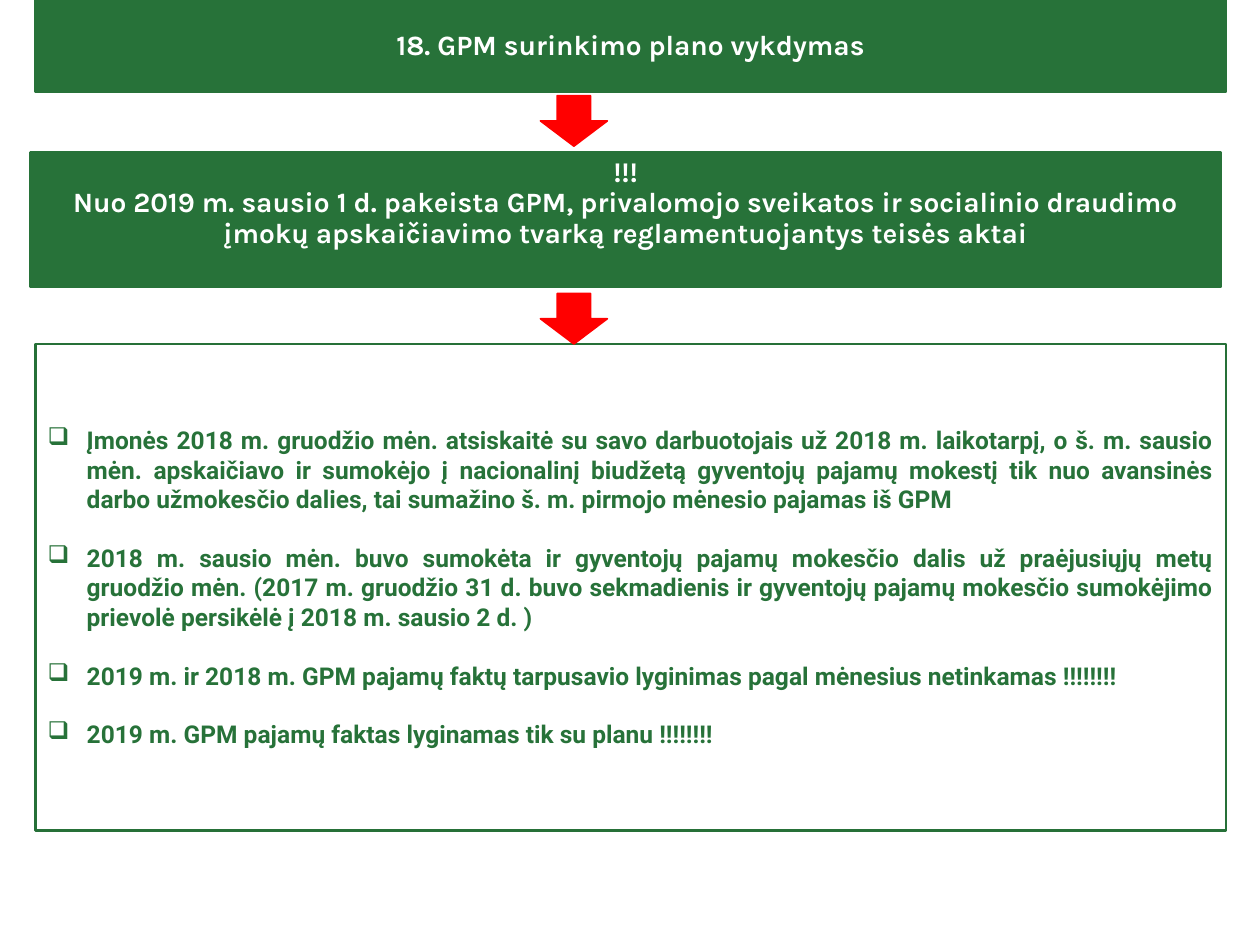
from lxml import etree
from pptx import Presentation
from pptx.dml.color import RGBColor
from pptx.enum.shapes import MSO_SHAPE as Preset
from pptx.enum.text import MSO_ANCHOR as Anchor, MSO_AUTO_SIZE as AutoSize, PP_ALIGN as Align
from pptx.oxml.ns import qn
from pptx.util import Inches, Pt

GREEN, RED, WHITE = "277239", "FF0000", "FFFFFF"
LEFT, WIDTH = 0.28, 9.45
HEADING = {"name": "Karla", "size": Pt(16), "bold": True}
BODY = {"name": "Roboto", "size": Pt(14), "bold": True}


def paint(shape, fill, line, line_width):
    shape.fill.solid()
    shape.fill.fore_color.rgb = RGBColor.from_string(fill)
    shape.line.color.rgb = RGBColor.from_string(line)
    shape.line.width = Pt(line_width)
    shape.shadow.inherit = False


def write(shape, lines, font, color, anchor, **layout):
    """Fill the shape with one paragraph per line and return the paragraphs."""
    frame = shape.text_frame
    frame.word_wrap = True
    frame.auto_size = AutoSize.NONE
    frame.vertical_anchor = anchor
    frame.text = "\n".join(lines)
    for para in frame.paragraphs:
        for name, value in layout.items():
            setattr(para, name, value)
        for span in para.runs:
            for name, value in font.items():
                setattr(span.font, name, value)
            span.font.color.rgb = RGBColor.from_string(color)
    return frame.paragraphs


deck = Presentation()
deck.slide_width, deck.slide_height = Inches(10), Inches(7.5)
page = deck.slides.add_slide(deck.slide_layouts[5])

# Title bar
title = page.shapes.title
title.left, title.top = Inches(LEFT), Inches(0)
title.width, title.height = Inches(WIDTH), Inches(0.73)
paint(title, GREEN, GREEN, 1.5)
write(title, ["18. GPM surinkimo plano vykdymas"], HEADING, WHITE, Anchor.MIDDLE,
      alignment=Align.CENTER, line_spacing=0.9)

# Notice of the changed law
notice = page.shapes.add_shape(
    Preset.RECTANGLE, Inches(0.24), Inches(1.21), Inches(WIDTH), Inches(1.07))
paint(notice, GREEN, GREEN, 1.5)
write(notice, [
    "!!!",
    "Nuo 2019 m. sausio 1 d. pakeista GPM, privalomojo sveikatos ir socialinio draudimo "
    "įmokų apskaičiavimo tvarką reglamentuojantys teisės aktai",
], HEADING, WHITE, Anchor.TOP, alignment=Align.CENTER, line_spacing=0.9)

# Bulleted explanation
details = page.shapes.add_shape(
    Preset.RECTANGLE, Inches(LEFT), Inches(2.73), Inches(WIDTH), Inches(3.86))
paint(details, WHITE, "267038", 1.5)
points = write(details, [
    "Įmonės 2018 m. gruodžio mėn. atsiskaitė su savo darbuotojais už 2018 m. laikotarpį, "
    "o š. m. sausio mėn. apskaičiavo ir sumokėjo į nacionalinį biudžetą gyventojų pajamų "
    "mokestį tik nuo avansinės darbo užmokesčio dalies, tai sumažino š. m. pirmojo mėnesio "
    "pajamas iš GPM",
    "2018 m. sausio mėn. buvo sumokėta ir gyventojų pajamų mokesčio dalis už praėjusiųjų "
    "metų gruodžio mėn. (2017 m. gruodžio 31 d. buvo sekmadienis ir gyventojų pajamų "
    "mokesčio sumokėjimo prievolė persikėlė į 2018 m. sausio 2 d. )",
    "2019 m. ir 2018 m. GPM pajamų faktų tarpusavio lyginimas pagal mėnesius netinkamas !!!!!!!!",
    "2019 m. GPM pajamų faktas lyginamas tik su planu !!!!!!!!",
], BODY, GREEN, Anchor.MIDDLE)
for number, para in enumerate(points):
    para.alignment = Align.JUSTIFY if number < 2 else Align.LEFT
    if number:
        para.space_before = Pt(16.8)
    props = para._p.get_or_add_pPr()
    props.set("marL", str(Inches(0.31)))
    props.set("indent", str(-Inches(0.31)))
    etree.SubElement(props, qn("a:buChar")).set("char", "❑")

# Arrows between the boxes
for top in (0.76, 2.33):
    arrow = page.shapes.add_shape(
        Preset.DOWN_ARROW, Inches(4.29), Inches(top), Inches(0.53), Inches(0.4))
    paint(arrow, RED, RED, 1)

deck.save("out.pptx")
